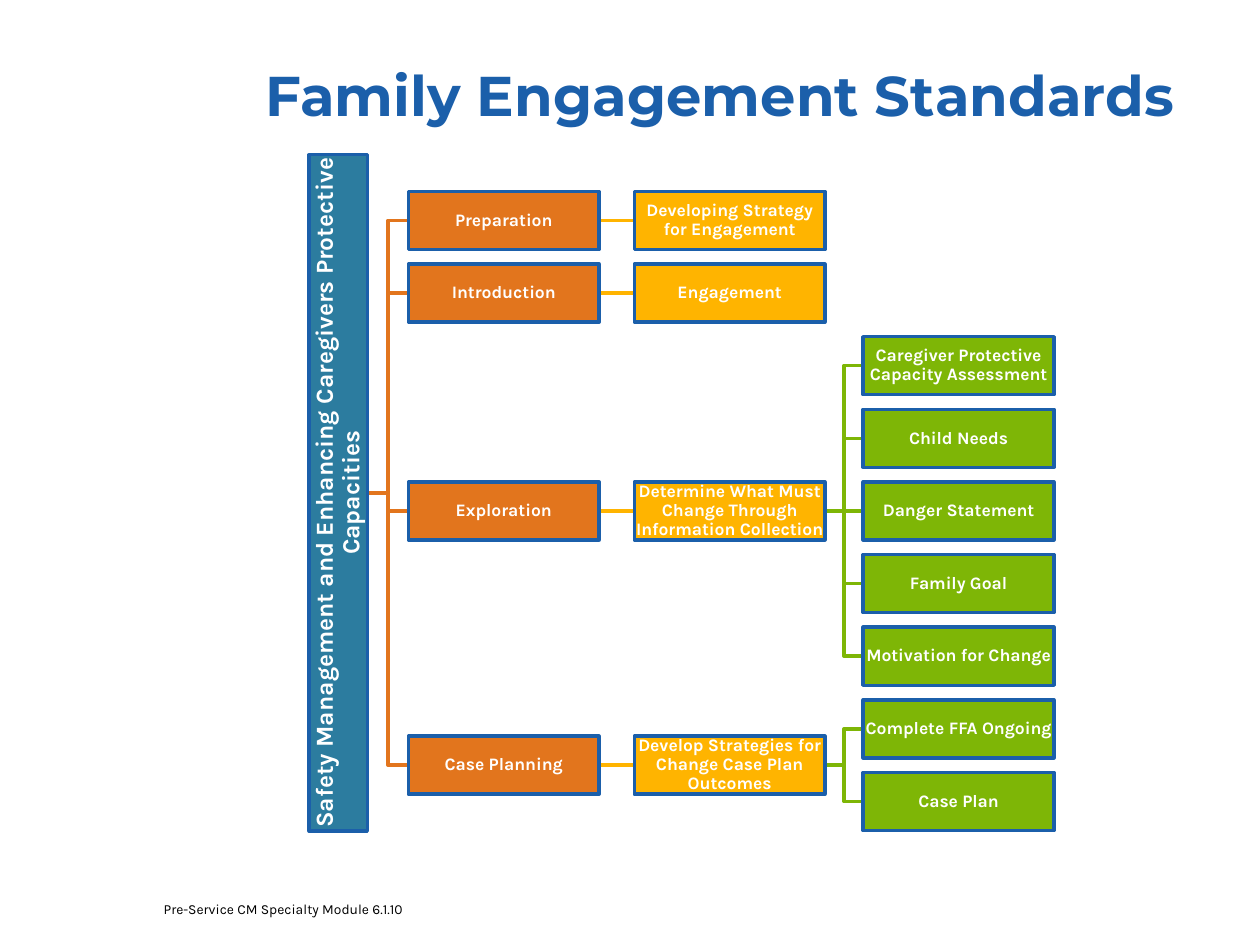
"""Build the Family Engagement Standards slide as a horizontal hierarchy."""

from dataclasses import dataclass

from lxml import etree
from pptx import Presentation
from pptx.dml.color import RGBColor
from pptx.enum.shapes import MSO_CONNECTOR, MSO_SHAPE
from pptx.enum.text import MSO_ANCHOR, MSO_AUTO_SIZE, PP_ALIGN
from pptx.oxml.ns import qn
from pptx.shapes.autoshape import Shape
from pptx.slide import Slide
from pptx.text.text import TextFrame
from pptx.util import Pt

RECTANGLE = MSO_SHAPE.RECTANGLE
STRAIGHT, ELBOW = MSO_CONNECTOR.STRAIGHT, MSO_CONNECTOR.ELBOW
MIDDLE, TOP = MSO_ANCHOR.MIDDLE, MSO_ANCHOR.TOP
CENTER, LEFT = PP_ALIGN.CENTER, PP_ALIGN.LEFT

BLUE = RGBColor(0x1B, 0x5F, 0xAA)
TEAL = RGBColor(0x2C, 0x7C, 0x9F)
ORANGE = RGBColor(0xE2, 0x75, 0x1D)
YELLOW = RGBColor(0xFF, 0xB4, 0x00)
GREEN = RGBColor(0x7E, 0xB6, 0x06)
WHITE = RGBColor(0xFF, 0xFF, 0xFF)
BLACK = RGBColor(0x00, 0x00, 0x00)

BOX_WIDTH, BOX_HEIGHT = 108.9, 33.2
FIRST_ROW, ROW_PITCH = 126, 41.5
ROOT_LENGTH, ROOT_CENTER = 386.6, 193.3
LINE_WIDTH = 2
RIGHT_SIDE, LEFT_SIDE = 3, 1


@dataclass(frozen=True)
class Level:
    left: float
    color: RGBColor


@dataclass(frozen=True)
class Branch:
    stage: str
    purpose: str
    outcomes: tuple[str, ...]
    first_row: int

    @property
    def row(self) -> float:
        return self.first_row + max(len(self.outcomes) - 1, 0) / 2


STAGE = Level(233.4, ORANGE)
PURPOSE = Level(362.5, YELLOW)
OUTCOME = Level(493.3, GREEN)

ROOT_TEXT = "Safety Management and Enhancing Caregivers Protective Capacities"
BRANCHES = (
    Branch("Preparation", "Developing Strategy for Engagement", (), 0),
    Branch("Introduction", "Engagement", (), 1),
    Branch(
        "Exploration",
        "Determine What Must Change Through Information Collection",
        (
            "Caregiver Protective Capacity Assessment",
            "Child Needs",
            "Danger Statement",
            "Family Goal",
            "Motivation for Change",
        ),
        2,
    ),
    Branch(
        "Case Planning",
        "Develop Strategies for Change Case Plan Outcomes",
        ("Complete FFA Ongoing", "Case Plan"),
        7,
    ),
)


def row_center(row: float) -> float:
    """Return the vertical centre of a row in points."""
    return FIRST_ROW + row * ROW_PITCH


def write_text(frame: TextFrame, text: str, color: RGBColor, font: dict,
               paragraph_format: dict, frame_format: dict) -> None:
    """Fill a text frame with one formatted paragraph."""
    frame.text = text
    paragraph = frame.paragraphs[0]
    for target, values in (
        (frame, frame_format),
        (paragraph, paragraph_format),
        (paragraph.font, font),
    ):
        for name, value in values.items():
            setattr(target, name, value)
    paragraph.font.color.rgb = color


def add_box(slide: Slide, text: str, center_x: float, center_y: float,
            width: float, color: RGBColor, size: float) -> Shape:
    """Add an outlined box around a centre point."""
    box = slide.shapes.add_shape(
        RECTANGLE, Pt(center_x - width / 2), Pt(center_y - BOX_HEIGHT / 2),
        Pt(width), Pt(BOX_HEIGHT),
    )
    box.shadow.inherit = False
    box.fill.solid()
    box.fill.fore_color.rgb = color
    box.line.color.rgb = BLUE
    box.line.width = Pt(LINE_WIDTH)
    margins = {f"margin_{side}": Pt(0.5) for side in ("left", "right", "top", "bottom")}
    write_text(
        box.text_frame, text, WHITE,
        {"name": "Karla", "size": Pt(size), "bold": True},
        {"alignment": CENTER, "line_spacing": 0.9},
        {"word_wrap": True, "vertical_anchor": MIDDLE, **margins},
    )
    return box


def add_node(slide: Slide, text: str, level: Level, row: float) -> Shape:
    """Add a hierarchy box in its column and row."""
    center_x = level.left + BOX_WIDTH / 2
    return add_box(slide, text, center_x, row_center(row), BOX_WIDTH, level.color, 10)


def add_link(slide: Slide, parent: Shape, child: Shape, color: RGBColor) -> None:
    """Link the right side of a parent to the left side of a child, behind the boxes."""
    parent_y = parent.top + parent.height // 2
    child_y = child.top + child.height // 2
    turned = parent.rotation != 0
    reach = parent.height if turned else parent.width
    start_x = parent.left + (parent.width + reach) // 2
    kind = STRAIGHT if parent_y == child_y else ELBOW
    link = slide.shapes.add_connector(kind, start_x, parent_y, child.left, child_y)
    if not turned:
        link.begin_connect(parent, RIGHT_SIDE)
    link.end_connect(child, LEFT_SIDE)
    link.line.color.rgb = color
    link.line.width = Pt(LINE_WIDTH)
    etree.SubElement(link.element.spPr, qn("a:effectLst"))
    link.element.getparent().insert(2, link.element)


def add_hierarchy(slide: Slide) -> None:
    """Draw the root, its branches and their links."""
    root_row = (BRANCHES[0].row + BRANCHES[-1].row) / 2
    root = add_box(slide, ROOT_TEXT, ROOT_CENTER, row_center(root_row), ROOT_LENGTH, TEAL, 14)
    root.rotation = 270
    for branch in BRANCHES:
        stage = add_node(slide, branch.stage, STAGE, branch.row)
        purpose = add_node(slide, branch.purpose, PURPOSE, branch.row)
        add_link(slide, root, stage, STAGE.color)
        add_link(slide, stage, purpose, PURPOSE.color)
        for row, text in enumerate(branch.outcomes, branch.first_row):
            outcome = add_node(slide, text, OUTCOME, row)
            add_link(slide, purpose, outcome, OUTCOME.color)


def main() -> None:
    """Create and save the presentation."""
    presentation = Presentation()
    presentation.slide_width, presentation.slide_height = Pt(720), Pt(540)
    slide = presentation.slides.add_slide(presentation.slide_layouts[5])

    title = slide.shapes.title
    title.left, title.top, title.width, title.height = Pt(132.5), Pt(8.6), Pt(558), Pt(90)
    write_text(
        title.text_frame, "Family Engagement Standards", BLUE,
        {"name": "Montserrat", "size": Pt(32), "bold": True},
        {"alignment": CENTER},
        {"word_wrap": True, "vertical_anchor": MIDDLE, "auto_size": MSO_AUTO_SIZE.NONE},
    )

    footer = slide.shapes.add_textbox(Pt(86.4), Pt(511.2), Pt(162), Pt(18))
    write_text(
        footer.text_frame, "Pre-Service CM Specialty Module 6.1.10", BLACK,
        {"name": "Karla", "size": Pt(7.9)},
        {"alignment": LEFT},
        {"word_wrap": True, "vertical_anchor": TOP},
    )

    add_hierarchy(slide)
    presentation.save("out.pptx")


if __name__ == "__main__":
    main()
